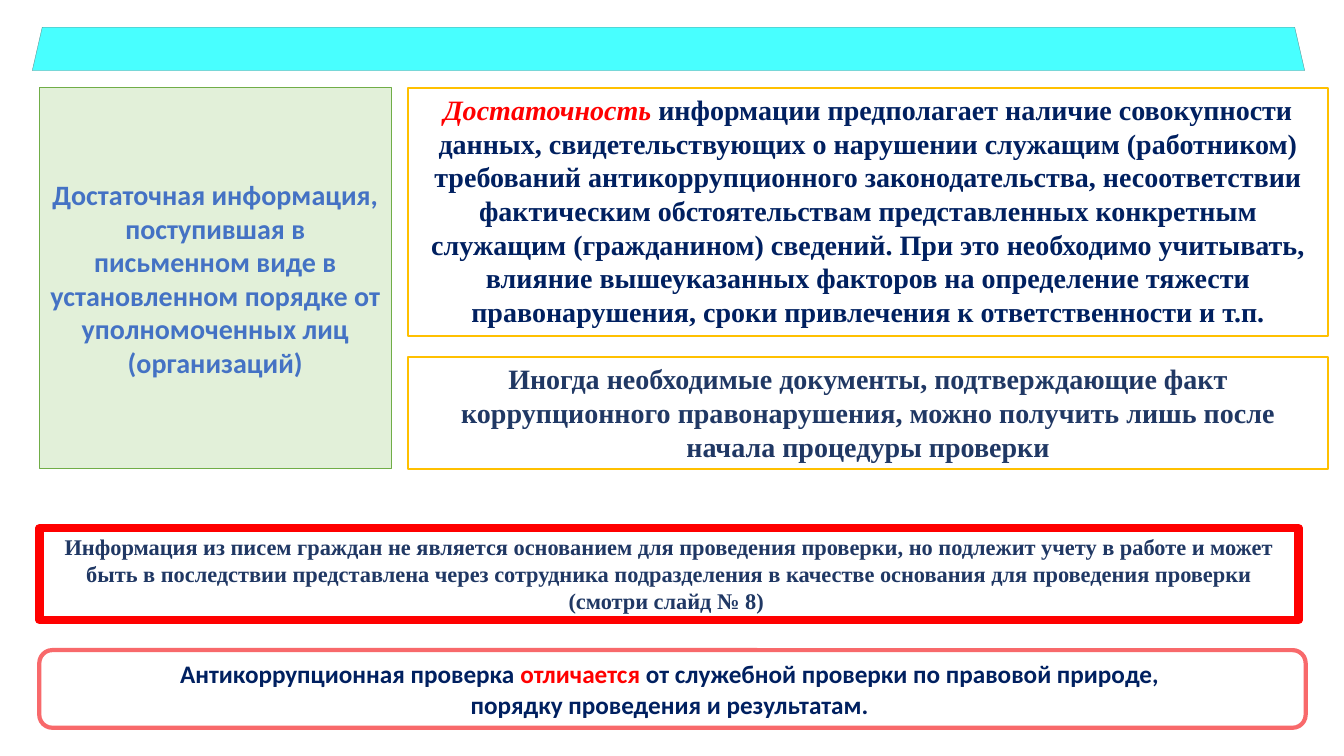
from dataclasses import dataclass

from pptx import Presentation
from pptx.dml.color import RGBColor
from pptx.enum.shapes import MSO_SHAPE
from pptx.enum.text import MSO_ANCHOR, MSO_AUTO_SIZE, PP_ALIGN
from pptx.util import Inches, Pt

RECTANGLE = MSO_SHAPE.RECTANGLE
ROUNDED = MSO_SHAPE.ROUNDED_RECTANGLE
TRAPEZOID = MSO_SHAPE.TRAPEZOID
TOP = MSO_ANCHOR.TOP
MIDDLE = MSO_ANCHOR.MIDDLE
CENTER = PP_ALIGN.CENTER
GROW = MSO_AUTO_SIZE.SHAPE_TO_FIT_TEXT
BLANK_LAYOUT = 6


@dataclass(frozen=True)
class Theme:
    serif: str = "Times New Roman"
    sans: str = "Calibri"
    large: int = 20
    medium: int = 18
    small: int = 16
    white: str = "FFFFFF"
    banner: str = "48FFFF"
    banner_line: str = "5F8F8F"
    green_fill: str = "E2F0D9"
    green_line: str = "70AD47"
    gold: str = "FFC000"
    red: str = "FF0000"
    coral: str = "F8696B"
    navy: str = "002060"
    dark_blue: str = "203864"
    blue: str = "4472C4"


THEME = Theme()


def add_panel(slide, kind, box, fill, line, line_width):
    shape = slide.shapes.add_shape(kind, *(Inches(length) for length in box))
    shape.shadow.inherit = False
    shape.fill.solid()
    shape.fill.fore_color.rgb = RGBColor.from_string(fill)
    shape.line.color.rgb = RGBColor.from_string(line)
    shape.line.width = Pt(line_width)
    return shape


def write_text(shape, paragraphs, font, size, anchor=TOP):
    frame = shape.text_frame
    frame.word_wrap = True
    frame.vertical_anchor = anchor
    if anchor == TOP:
        frame.auto_size = GROW
    for index, runs in enumerate(paragraphs):
        paragraph = frame.add_paragraph() if index else frame.paragraphs[0]
        paragraph.alignment = CENTER
        for text, color, italic in runs:
            run = paragraph.add_run()
            run.text = text
            run.font.name = font
            run.font.size = Pt(size)
            run.font.bold = True
            run.font.italic = italic
            run.font.color.rgb = RGBColor.from_string(color)


def add_banner(slide):
    banner = add_panel(slide, TRAPEZOID, (0.32, 0.27, 12.62, 0.43),
                       THEME.banner, THEME.banner_line, 0.25)
    banner.adjustments[0] = 0.23


def add_definition(slide):
    panel = add_panel(slide, RECTANGLE, (4.05, 0.87, 9.12, 2.46), THEME.white, THEME.gold, 1.5)
    write_text(panel, [[
        ("Достаточность", THEME.red, True),
        (" информации предполагает наличие совокупности данных, свидетельствующих "
         "о нарушении служащим (работником) требований антикоррупционного "
         "законодательства, несоответствии фактическим обстоятельствам представленных "
         "конкретным служащим (гражданином) сведений. При это необходимо учитывать, "
         "влияние вышеуказанных факторов на определение тяжести правонарушения, "
         "сроки привлечения к ответственности и т.п.", THEME.navy, False),
    ]], THEME.serif, THEME.large)


def add_source_panel(slide):
    panel = add_panel(slide, RECTANGLE, (0.39, 0.87, 3.49, 3.78),
                      THEME.green_fill, THEME.green_line, 1)
    write_text(panel, [[
        ("Достаточная информация, поступившая в письменном виде в установленном "
         "порядке от уполномоченных лиц (организаций)", THEME.blue, False),
    ]], THEME.sans, THEME.large, MIDDLE)


def add_documents_note(slide):
    panel = add_panel(slide, RECTANGLE, (4.05, 3.54, 9.12, 1.11), THEME.white, THEME.gold, 1.5)
    write_text(panel, [[
        ("Иногда необходимые документы, подтверждающие факт коррупционного "
         "правонарушения, можно получить лишь после начала процедуры проверки",
         THEME.dark_blue, False),
    ]], THEME.serif, THEME.large)


def add_letters_warning(slide):
    panel = add_panel(slide, RECTANGLE, (0.39, 5.24, 12.49, 0.91), THEME.white, THEME.red, 6)
    write_text(panel, [
        [("Информация из писем граждан не является основанием для проведения проверки, "
          "но подлежит учету в работе и может быть в последствии представлена через "
          "сотрудника подразделения в качестве основания для проведения проверки",
          THEME.dark_blue, False)],
        [("(смотри слайд № 8) ", THEME.dark_blue, False)],
    ], THEME.serif, THEME.small)


def add_conclusion(slide):
    panel = add_panel(slide, ROUNDED, (0.39, 6.45, 12.56, 0.77), THEME.white, THEME.coral, 3)
    panel.adjustments[0] = 0.167
    write_text(panel, [
        [("Антикоррупционная проверка ", THEME.navy, False),
         ("отличается ", THEME.red, False),
         ("от служебной проверки по правовой природе, ", THEME.navy, False)],
        [("порядку проведения и результатам. ", THEME.navy, False)],
    ], THEME.sans, THEME.medium, MIDDLE)


def main():
    presentation = Presentation()
    presentation.slide_width = Inches(13.33)
    presentation.slide_height = Inches(7.5)
    slide = presentation.slides.add_slide(presentation.slide_layouts[BLANK_LAYOUT])
    add_banner(slide)
    add_definition(slide)
    add_source_panel(slide)
    add_documents_note(slide)
    add_letters_warning(slide)
    add_conclusion(slide)
    presentation.save("out.pptx")


if __name__ == "__main__":
    main()
